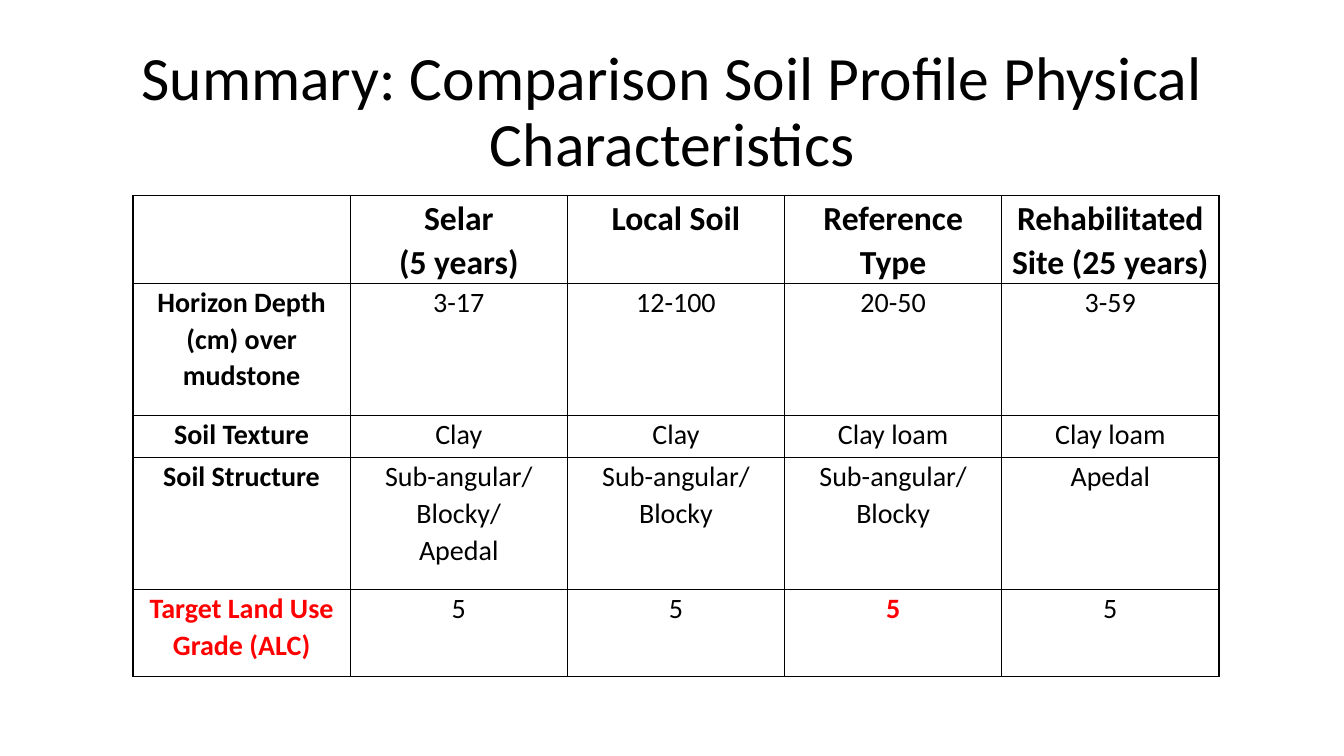
from lxml.etree import SubElement
from pptx import Presentation
from pptx.dml.color import RGBColor
from pptx.enum.text import MSO_ANCHOR, PP_ALIGN
from pptx.oxml.ns import qn
from pptx.util import Inches, Pt

BLACK = RGBColor(0x00, 0x00, 0x00)
RED = RGBColor(0xFF, 0x00, 0x00)

TITLE = "Summary: Comparison Soil Profile Physical Characteristics"
ROWS = [
    ["", "Selar\n(5 years)", "Local Soil", "Reference Type",
     "Rehabilitated Site (25 years)"],
    ["Horizon Depth (cm) over mudstone", "3-17", "12-100", "20-50", "3-59"],
    ["Soil Texture", "Clay", "Clay", "Clay loam", "Clay loam"],
    ["Soil Structure", "Sub-angular/Blocky/\nApedal", "Sub-angular/Blocky",
     "Sub-angular/Blocky", "Apedal"],
    ["Target Land Use Grade (ALC)", "5", "5", "5", "5"],
]
ROW_SHARES = [11.6, 17.47, 5.6, 17.47, 11.47]
HIGHLIGHTS = {(4, 0), (4, 3)}


class SlideBuilder:
    """Holds the slide and its style; lengths are percent of the slide size."""

    font = "Calibri"
    title_size, header_size, body_size = 44, 24, 20
    border = Pt(1)

    def __init__(self, prs):
        self.width, self.height = prs.slide_width, prs.slide_height
        self.slide = prs.slides.add_slide(prs.slide_layouts[5])

    def x(self, share):
        return round(self.width * share / 100)

    def y(self, share):
        return round(self.height * share / 100)

    def add_text(self, tf, text, size, spacing, bold=False, color=BLACK):
        for i, line in enumerate(text.split("\n")):
            p = tf.add_paragraph() if i else tf.paragraphs[0]
            p.alignment = PP_ALIGN.CENTER
            p.line_spacing = spacing
            r = p.add_run()
            r.text = line
            r.font.name = self.font
            r.font.size = Pt(size)
            r.font.bold = bold
            r.font.color.rgb = color

    def title(self, text, left, top, width, height):
        sp = self.slide.shapes.title
        sp.left, sp.top = self.x(left), self.y(top)
        sp.width, sp.height = self.x(width), self.y(height)
        tf = sp.text_frame
        tf.word_wrap = True
        tf.vertical_anchor = MSO_ANCHOR.MIDDLE
        self.add_text(tf, text, self.title_size, 0.9)

    def outline(self, cell):
        tc_pr = cell._tc.get_or_add_tcPr()
        for side in ("a:lnL", "a:lnR", "a:lnT", "a:lnB"):
            ln = SubElement(tc_pr, qn(side), w=str(self.border))
            fill = SubElement(ln, qn("a:solidFill"))
            SubElement(fill, qn("a:srgbClr"), val=str(BLACK))

    def table(self, rows, row_shares, highlights, left, top, width):
        """Bold the first row and column; colour the highlighted cells."""
        frame = self.slide.shapes.add_table(
            len(rows), len(rows[0]), self.x(left), self.y(top),
            self.x(width), self.y(sum(row_shares)))
        table = frame.table
        table.horz_banding = False
        for i, (row, share) in enumerate(zip(rows, row_shares)):
            table.rows[i].height = self.y(share)
            for j, text in enumerate(row):
                cell = table.cell(i, j)
                cell.margin_left = cell.margin_right = Inches(0.07)
                cell.margin_top = cell.margin_bottom = 0
                self.outline(cell)
                cell.fill.background()
                marked = (i, j) in highlights
                if text:
                    self.add_text(cell.text_frame, text,
                                  self.body_size if i else self.header_size,
                                  1.07, bold=i == 0 or j == 0 or marked,
                                  color=RED if marked else BLACK)


def main():
    prs = Presentation()
    prs.slide_width, prs.slide_height = Inches(13.33), Inches(7.5)
    s = SlideBuilder(prs)
    s.title(TITLE, 6.9, 5.33, 86.25, 19.33)
    s.table(ROWS, ROW_SHARES, HIGHLIGHTS, 9.9, 25.87, 80.8)
    prs.save("out.pptx")


if __name__ == "__main__":
    main()
